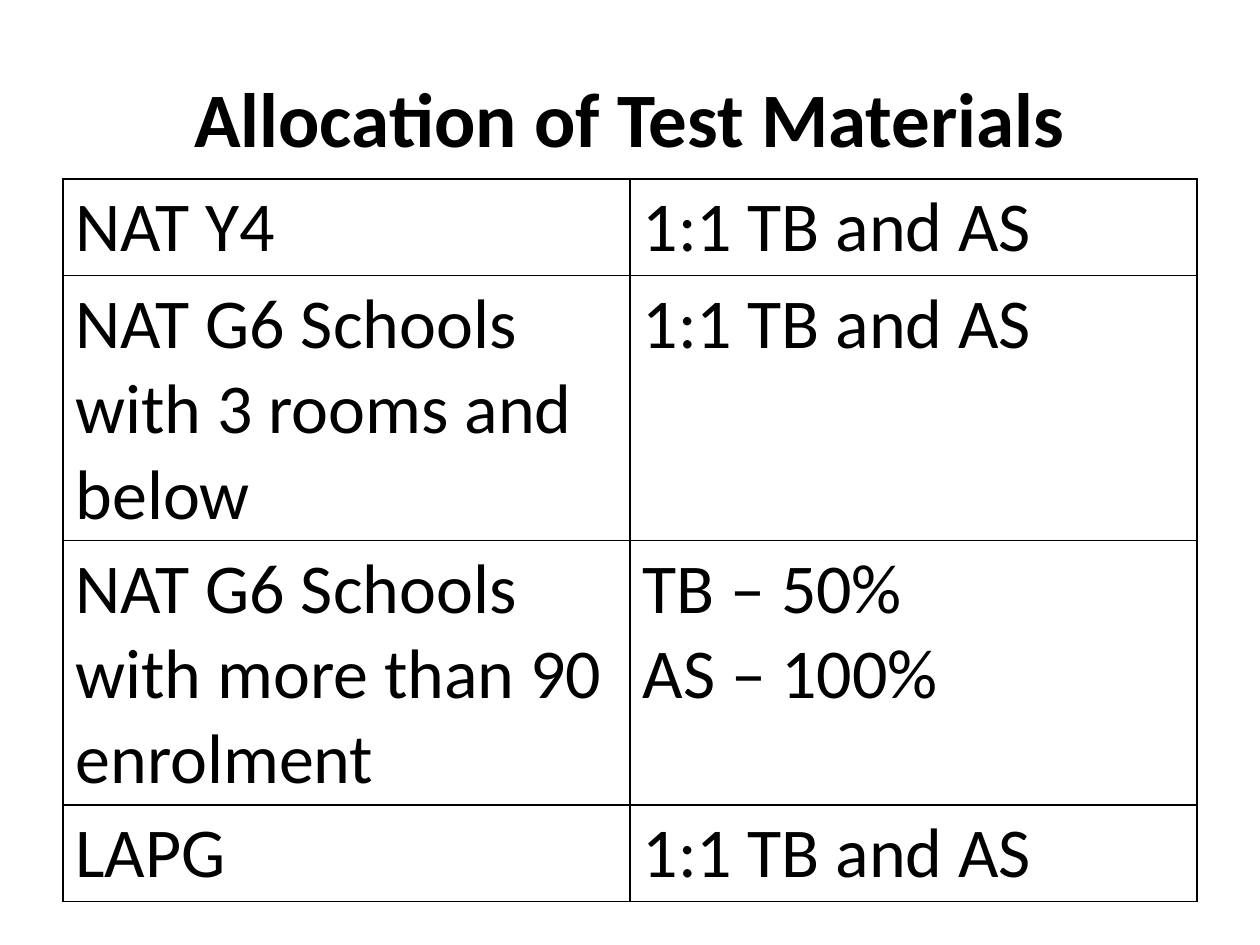
from lxml import etree
from pptx import Presentation
from pptx import util as u
from pptx.dml.color import RGBColor
from pptx.enum import text
from pptx.oxml.ns import qn

INK = "000000"
FONT = "Calibri"
RATIO = "1:1 TB and AS"
ROWS = [
    ("NAT Y4", RATIO),
    ("NAT G6 Schools with 3 rooms and below", RATIO),
    ("NAT G6 Schools with more than 90 enrolment", "TB – 50%\nAS – 100%"),
    ("LAPG", RATIO),
]


def tint(color, code):
    color.rgb = RGBColor.from_string(code)


def write(frame, words, size, bold=False, align=text.PP_ALIGN.LEFT):
    frame.text = words
    style = {"name": FONT, "size": u.Pt(size), "bold": bold}
    for para in frame.paragraphs:
        para.alignment = align
        for run in para.runs:
            for key, value in style.items():
                setattr(run.font, key, value)
            tint(run.font.color, INK)


def border(cell, code, width):
    """Draw a solid line on all four sides of a cell."""
    props = cell._tc.get_or_add_tcPr()
    for spot, side in enumerate(("lnL", "lnR", "lnT", "lnB")):
        line = etree.Element(qn(f"a:{side}"), w=str(u.Pt(width)))
        fill = etree.SubElement(line, qn("a:solidFill"))
        etree.SubElement(fill, qn("a:srgbClr"), val=code)
        props.insert(spot, line)


def add_title(slide, words):
    box = slide.shapes.add_textbox(u.Cm(1.27), u.Cm(0.76), u.Cm(22.86), u.Cm(3.18))
    frame = box.text_frame
    frame.word_wrap = True
    frame.vertical_anchor = text.MSO_ANCHOR.MIDDLE
    write(frame, words, 44, True, text.PP_ALIGN.CENTER)


def add_grid(slide, rows):
    high = u.Cm(1.57)
    table = slide.shapes.add_table(
        len(rows), 2, u.Cm(1.27), u.Cm(3.61), u.Cm(22.86), high * len(rows)
    ).table
    table.first_row = table.horz_banding = False
    for r, row in enumerate(rows):
        for c, words in enumerate(row):
            cell = table.cell(r, c)
            cell.fill.background()
            write(cell.text_frame, words, 40)
            border(cell, INK, 1)


def main():
    deck = Presentation()
    deck.slide_width, deck.slide_height = u.Cm(25.4), u.Cm(19.05)
    slide = deck.slides.add_slide(deck.slide_layouts[6])
    add_title(slide, "Allocation of Test Materials")
    add_grid(slide, ROWS)
    deck.save("out.pptx")


if __name__ == "__main__":
    main()
